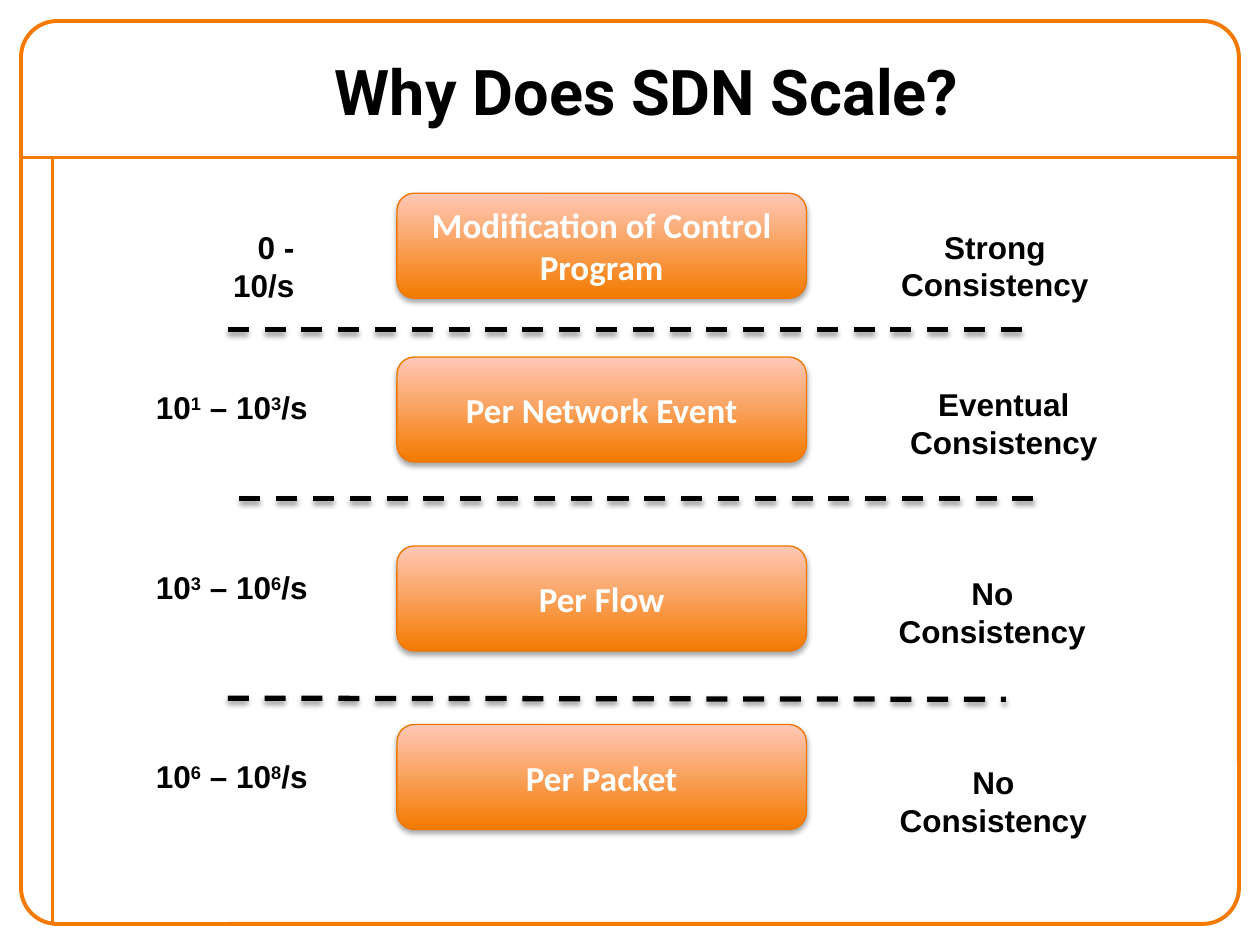
"""Build the slide 'Why Does SDN Scale?' on a grid of 120 columns by 90 rows."""
import lxml.etree
import pptx
import pptx.dml.color
import pptx.enum.dml
import pptx.enum.shapes
import pptx.enum.text
import pptx.oxml.ns
import pptx.util

ALIGN = pptx.enum.text.PP_ALIGN
ANCHOR = pptx.enum.text.MSO_ANCHOR
SHAPE = pptx.enum.shapes.MSO_SHAPE
ORANGE, EDGE, PEACH = "F47A00", "EF7700", "FFC8B7"
BLACK, WHITE = "000000", "FFFFFF"

presentation = pptx.Presentation()
presentation.slide_width = pptx.util.Inches(10)
presentation.slide_height = pptx.util.Inches(7.5)
cell = presentation.slide_width / 120
slide = presentation.slides.add_slide(presentation.slide_layouts[5])


def color(value):
    """Turn a hex string into a colour."""
    return pptx.dml.color.RGBColor.from_string(value)


def style(shape, text=None, line=None, shadow=None):
    """Format the text, the line and the shadow of a shape or connector."""
    if text:
        runs, font, align, frame_format = text
        for name, value in {"word_wrap": True, **frame_format}.items():
            setattr(shape.text_frame, name, value)
        paragraph = shape.text_frame.paragraphs[0]
        paragraph.alignment = align
        for index, words in enumerate(runs):
            run = paragraph.add_run()
            run.text = words
            for name, value in {"name": font[0], "size": pptx.util.Pt(font[1]), "bold": True}.items():
                setattr(run.font, name, value)
            run.font.color.rgb = color(font[2])
            if index % 2:
                run.font._element.set("baseline", "30000")
    if line:
        shape.line.color.rgb = color(line[0])
        shape.line.width = pptx.util.Pt(line[1])
        qn = pptx.oxml.ns.qn
        effects = lxml.etree.SubElement(shape._element.spPr, qn("a:effectLst"))
        if shadow:
            outer = lxml.etree.SubElement(
                effects, qn("a:outerShdw"), blurRad=str(pptx.util.Pt(3.1)),
                dist=str(pptx.util.Pt(shadow[0])), dir="5400000", rotWithShape="0")
            tint = lxml.etree.SubElement(outer, qn("a:srgbClr"), val=BLACK)
            lxml.etree.SubElement(tint, qn("a:alpha"), val=str(shadow[1] * 1000))


title = slide.shapes.title
title_box = {"left": 3.2, "top": 4.6, "width": 116.8, "height": 7.4}
for name, value in title_box.items():
    setattr(title, name, round(value * cell))
style(title, (["Why Does SDN Scale?"], ("Roboto", 36, BLACK), ALIGN.CENTER,
              {"vertical_anchor": ANCHOR.TOP, "margin_top": pptx.util.Inches(0.03)}))

frame = slide.shapes.add_shape(
    SHAPE.ROUNDED_RECTANGLE, *[round(value * cell) for value in (2, 2, 116, 86)])
frame.adjustments[0] = 0.04
frame.fill.background()
style(frame, line=(ORANGE, 2.25))

rules = [
    ((2, 15, 118, 15), (ORANGE, 2.25), None),
    ((5, 15, 5, 88), (ORANGE, 2.25), None),
    ((21.7, 31.4, 97.8, 31.4), (BLACK, 3), (1.6, 38)),
    ((22.8, 47.5, 98.8, 47.5), (BLACK, 3), (1.6, 38)),
    ((21.7, 66.5, 95.8, 66.6), (BLACK, 3), (1.6, 38)),
]
for ends, line, shadow in rules:
    connector = slide.shapes.add_connector(
        pptx.enum.shapes.MSO_CONNECTOR.STRAIGHT, *[round(value * cell) for value in ends])
    if shadow:
        connector.line.dash_style = pptx.enum.dml.MSO_LINE.DASH
    style(connector, line=line, shadow=shadow)

levels = [
    (18.4, "Modification of Control Program", ["0 - 10/s"], (21, 21.1, 11.6, 4.5),
     "Strong Consistency", (80.4, 21.1, 28.7, 4.8)),
    (34, "Per Network Event", ["10", "1", " – 10", "3", "/s"], (13.8, 36.4, 22.1, 6.6),
     "Eventual Consistency", (79.8, 36.1, 31.6, 4.8)),
    (52, "Per Flow", ["10", "3", " – 10", "6", "/s"], (13.8, 53.5, 22.1, 6.6),
     "No Consistency", (82.7, 54.1, 23.6, 4.8)),
    (69, "Per Packet", ["10", "6", " – 10", "8", "/s"], (13.8, 71.5, 22.1, 6.6),
     "No Consistency", (82.8, 72.1, 23.6, 4.8)),
]
for top, name, rate, rate_box, consistency, consistency_box in levels:
    box = slide.shapes.add_shape(
        SHAPE.ROUNDED_RECTANGLE, *[round(value * cell) for value in (37.8, top, 39, 10)])
    box.fill.gradient()
    box.fill.gradient_angle = 90
    for stop, value in zip(box.fill.gradient_stops, (ORANGE, PEACH)):
        stop.color.rgb = color(value)
    style(box, ([name], ("Calibri", 20, WHITE), ALIGN.CENTER, {"vertical_anchor": ANCHOR.MIDDLE}),
          (EDGE, 0.75), (1.8, 35))

    rate_margins = {"margin_left": pptx.util.Inches(0.06),
                    "margin_right": pptx.util.Inches(0.55 if len(rate) > 1 else 0.38)}
    for runs, place, align, margins in (
            (rate, rate_box, ALIGN.RIGHT, rate_margins),
            ([consistency], consistency_box, ALIGN.CENTER, {})):
        label = slide.shapes.add_textbox(*[round(value * cell) for value in place])
        style(label, (runs, ("Arial", 18, BLACK), align, margins))

presentation.save("out.pptx")
